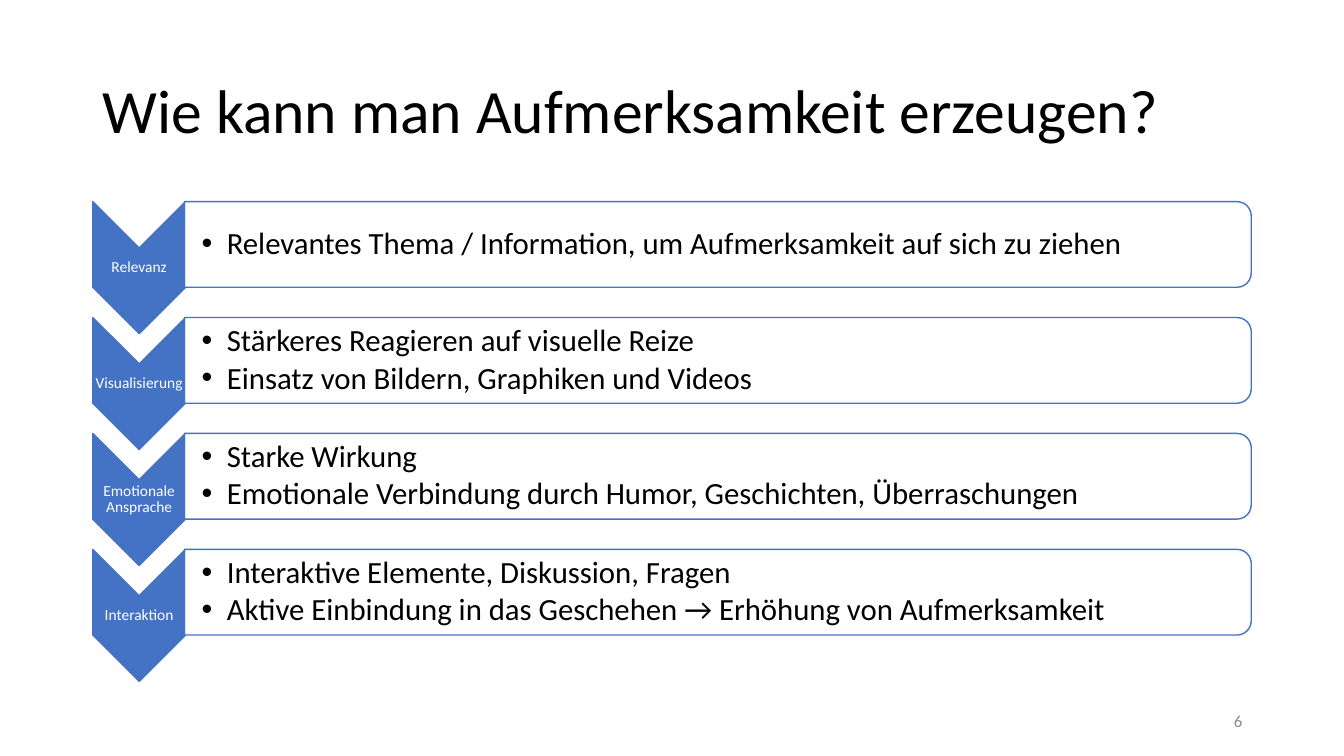
from lxml import etree
from pptx import Presentation
from pptx.dml.color import RGBColor
from pptx.enum.shapes import MSO_SHAPE
from pptx.enum.text import MSO_ANCHOR, PP_ALIGN
from pptx.oxml.ns import qn
from pptx.util import Inches, Pt

CHEVRON = MSO_SHAPE.CHEVRON
BAR = MSO_SHAPE.ROUND_2_SAME_RECTANGLE
MIDDLE = MSO_ANCHOR.MIDDLE
LEFT, CENTER, RIGHT = PP_ALIGN.LEFT, PP_ALIGN.CENTER, PP_ALIGN.RIGHT

# Content
TITLE = "Wie kann man Aufmerksamkeit erzeugen?"
PAGE_NUMBER = "6"
STEPS = [
    ("Relevanz", ["Relevantes Thema / Information, um Aufmerksamkeit auf sich zu ziehen"]),
    ("Visualisierung", ["Stärkeres Reagieren auf visuelle Reize",
                        "Einsatz von Bildern, Graphiken und Videos"]),
    ("Emotionale Ansprache", ["Starke Wirkung",
                              "Emotionale Verbindung durch Humor, Geschichten, Überraschungen"]),
    ("Interaktion", ["Interaktive Elemente, Diskussion, Fragen",
                     "Aktive Einbindung in das Geschehen → Erhöhung von Aufmerksamkeit"]),
]

THEME = {
    "font": "Calibri",
    "accent": RGBColor(0x44, 0x72, 0xC4),
    "white": RGBColor(0xFF, 0xFF, 0xFF),
    "black": RGBColor(0, 0, 0),
    "grey": RGBColor(0x8C, 0x8C, 0x8C),
    "title": 44, "body": 22, "label": 11, "number": 12,
}

# Layout in inches
TOP, PITCH = 2.0, 1.15
ARROW_LEFT, ARROW_WIDTH, ARROW_HEIGHT = 0.92, 0.92, 1.31
BAR_LEFT, BAR_WIDTH, BAR_HEIGHT = 1.83, 10.58, 0.85


def add_turned(page, kind, left, top, width, height, fill):
    """Add a shape turned by 90 degrees that covers the given visible area."""
    shift = (width - height) / 2
    shape = page.shapes.add_shape(kind, Inches(left + shift), Inches(top - shift),
                                  Inches(height), Inches(width))
    shape.rotation = 90
    shape.shadow.inherit = False
    shape.fill.solid()
    shape.fill.fore_color.rgb = THEME[fill]
    shape.line.color.rgb = THEME["accent"]
    shape.line.width = Pt(1)
    return shape


def add_text(page, area, lines, size, color, align=LEFT, margins=(0.1, 0.05, 0.1, 0.05),
             spacing=0.9, bullet=False):
    box = page.shapes.add_textbox(*map(Inches, area))
    frame = box.text_frame
    frame.word_wrap = True
    frame.vertical_anchor = MIDDLE
    (frame.margin_left, frame.margin_top,
     frame.margin_right, frame.margin_bottom) = map(Inches, margins)
    frame.text = "\n".join(lines)
    for para in frame.paragraphs:
        para.alignment = align
        para.line_spacing = spacing
        if bullet:
            para.space_after = Pt(3)
            properties = para._p.get_or_add_pPr()
            properties.set("marL", str(Inches(0.25)))
            properties.set("indent", str(Inches(-0.25)))
            etree.SubElement(properties, qn("a:buFont"), typeface="Arial")
            etree.SubElement(properties, qn("a:buChar"), char="•")
        for span in para.runs:
            span.font.name = THEME["font"]
            span.font.size = Pt(THEME[size])
            span.font.color.rgb = THEME[color]


def add_step(page, top, label, points):
    # Arrow with its label
    add_turned(page, CHEVRON, ARROW_LEFT, top, ARROW_WIDTH, ARROW_HEIGHT, "accent")
    add_text(page, (ARROW_LEFT, top + 0.46, ARROW_WIDTH, 0.39), [label], "label", "white",
             CENTER, (0.01,) * 4)
    # Bar with its points
    bar = add_turned(page, BAR, BAR_LEFT, top, BAR_WIDTH, BAR_HEIGHT, "white")
    color = bar.fill._xPr.find(qn("a:solidFill"))[0]
    etree.SubElement(color, qn("a:alpha"), val="90000")
    add_text(page, (BAR_LEFT, top + 0.04, 10.54, 0.77), points, "body", "black",
             margins=(0.17, 0.02, 0.02, 0.02), bullet=True)


def main():
    deck = Presentation()
    deck.slide_width, deck.slide_height = Inches(13.33), Inches(7.5)
    page = deck.slides.add_slide(deck.slide_layouts[6])

    add_text(page, (0.92, 0.4, 11.5, 1.45), [TITLE], "title", "black")
    for index, (label, points) in enumerate(STEPS):
        add_step(page, TOP + index * PITCH, label, points)
    add_text(page, (9.42, 6.95, 3, 0.4), [PAGE_NUMBER], "number", "grey", RIGHT, spacing=1.0)

    deck.save("out.pptx")


if __name__ == "__main__":
    main()
